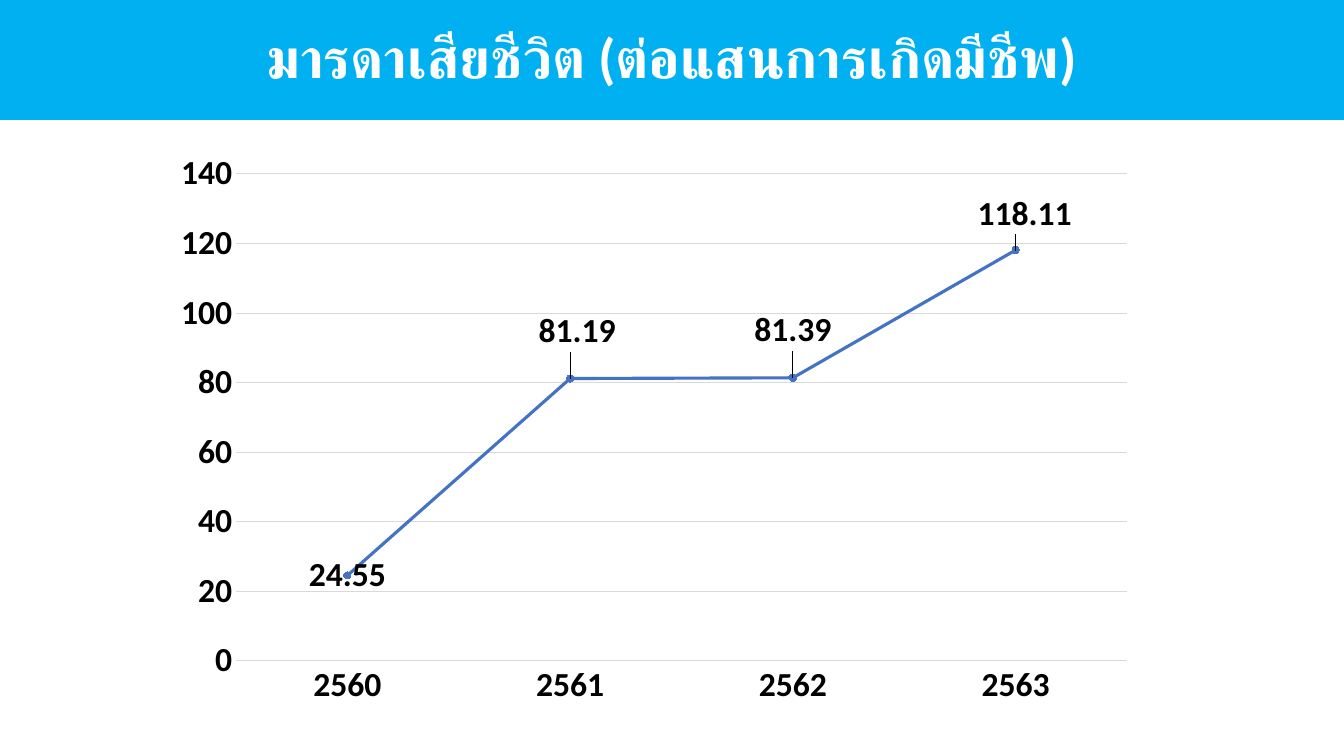
import pptx
import pptx.chart.data
import pptx.dml.color
import pptx.enum.chart
import pptx.enum.text
import pptx.oxml
import pptx.oxml.ns
import pptx.util

EMU_PER_PX = 914400 / 100.8
THEME = {
    "font": "Calibri",
    "band": "00B0F0", "title": "FFFFFF", "text": "000000",
    "line": "4472C4", "grid": "D9D9D9",
    "title_size": 40, "chart_size": 24,
}


def px(length):
    return pptx.util.Emu(round(length * EMU_PER_PX))


def style_font(font, size, color):
    font.name = THEME["font"]
    font.size = pptx.util.Pt(THEME[size])
    font.bold = True
    font.color.rgb = pptx.dml.color.RGBColor.from_string(THEME[color])


rgb = pptx.dml.color.RGBColor.from_string
presentation = pptx.Presentation()
presentation.slide_width, presentation.slide_height = px(1344), px(756)
slide = presentation.slides.add_slide(presentation.slide_layouts[5])

# Title band
title = slide.shapes.title
title.left, title.top, title.width, title.height = px(0), px(0), px(1344), px(120)
title.fill.solid()
title.fill.fore_color.rgb = rgb(THEME["band"])
title.text_frame.text = "มารดาเสียชีวิต (ต่อแสนการเกิดมีชีพ)"
title.text_frame.vertical_anchor = pptx.enum.text.MSO_ANCHOR.MIDDLE
heading = title.text_frame.paragraphs[0]
heading.alignment = pptx.enum.text.PP_ALIGN.CENTER
heading.line_spacing = 0.9
style_font(heading.runs[0].font, "title_size", "title")
thai_font = pptx.oxml.parse_xml(
    f'<a:cs {pptx.oxml.ns.nsdecls("a")} typeface="{THEME["font"]}"/>')
heading.runs[0].font._element.append(thai_font)

# Maternal deaths by year
deaths = pptx.chart.data.CategoryChartData()
deaths.categories = ["2560", "2561", "2562", "2563"]
deaths.add_series("Series 1", (24.55, 81.19, 81.39, 118.11))
chart_left, chart_top, chart_width, chart_height = 160, 142, 986, 577
chart = slide.shapes.add_chart(
    pptx.enum.chart.XL_CHART_TYPE.LINE_MARKERS,
    px(chart_left), px(chart_top), px(chart_width), px(chart_height), deaths).chart
chart.has_legend = False
chart.has_title = False
style_font(chart.font, "chart_size", "text")

# Plot area inside the axes
plot_left, plot_top, plot_width, plot_height = 236, 174, 891, 487
plot_layout = pptx.oxml.parse_xml(
    f'<c:layout {pptx.oxml.ns.nsdecls("c")}><c:manualLayout>'
    '<c:layoutTarget val="inner"/><c:xMode val="edge"/><c:yMode val="edge"/>'
    f'<c:x val="{(plot_left - chart_left) / chart_width:.4f}"/>'
    f'<c:y val="{(plot_top - chart_top) / chart_height:.4f}"/>'
    f'<c:w val="{plot_width / chart_width:.4f}"/>'
    f'<c:h val="{plot_height / chart_height:.4f}"/>'
    '</c:manualLayout></c:layout>')
plot_area = chart._chartSpace.chart.plotArea
for automatic_layout in plot_area.findall(pptx.oxml.ns.qn("c:layout")):
    plot_area.remove(automatic_layout)
plot_area.insert(0, plot_layout)

# Axes and gridlines
years, rates = chart.category_axis, chart.value_axis
for axis in (years, rates):
    axis.major_tick_mark = pptx.enum.chart.XL_TICK_MARK.NONE
    axis.minor_tick_mark = pptx.enum.chart.XL_TICK_MARK.NONE
    style_font(axis.tick_labels.font, "chart_size", "text")
years.has_major_gridlines = False
rates.has_major_gridlines = True
rates.minimum_scale, rates.maximum_scale, rates.major_unit = 0, 140, 20
rates.format.line.fill.background()
for rule in (years.format.line, rates.major_gridlines.format.line):
    rule.color.rgb = rgb(THEME["grid"])
    rule.width = pptx.util.Pt(0.75)

# Death rate line
chart.plots[0].vary_by_categories = False
death_rate = chart.plots[0].series[0]
death_rate.smooth = False
death_rate.format.line.color.rgb = rgb(THEME["line"])
death_rate.format.line.width = pptx.util.Pt(2.25)
marker = death_rate.marker
marker.style = pptx.enum.chart.XL_MARKER_STYLE.CIRCLE
marker.size = 5
marker.format.fill.solid()
marker.format.fill.fore_color.rgb = rgb(THEME["line"])
marker.format.line.color.rgb = rgb(THEME["line"])

# Value labels, the last three moved clear of the line
labels = death_rate.data_labels
labels.show_value = True
labels.position = pptx.enum.chart.XL_LABEL_POSITION.CENTER
style_font(labels.font, "chart_size", "text")
label_shifts = {1: (7, -47), 2: (0, -47), 3: (9, -36)}
for year_index, (shift_x, shift_y) in label_shifts.items():
    label = death_rate.points[year_index].data_label
    style_font(label.font, "chart_size", "text")
    label.position = pptx.enum.chart.XL_LABEL_POSITION.CENTER
    label_layout = pptx.oxml.parse_xml(
        f'<c:layout {pptx.oxml.ns.nsdecls("c")}><c:manualLayout>'
        f'<c:x val="{shift_x / chart_width:.4f}"/>'
        f'<c:y val="{shift_y / chart_height:.4f}"/>'
        '</c:manualLayout></c:layout>')
    labels._element.findall(pptx.oxml.ns.qn("c:dLbl"))[year_index - 1].insert(1, label_layout)

presentation.save("out.pptx")
